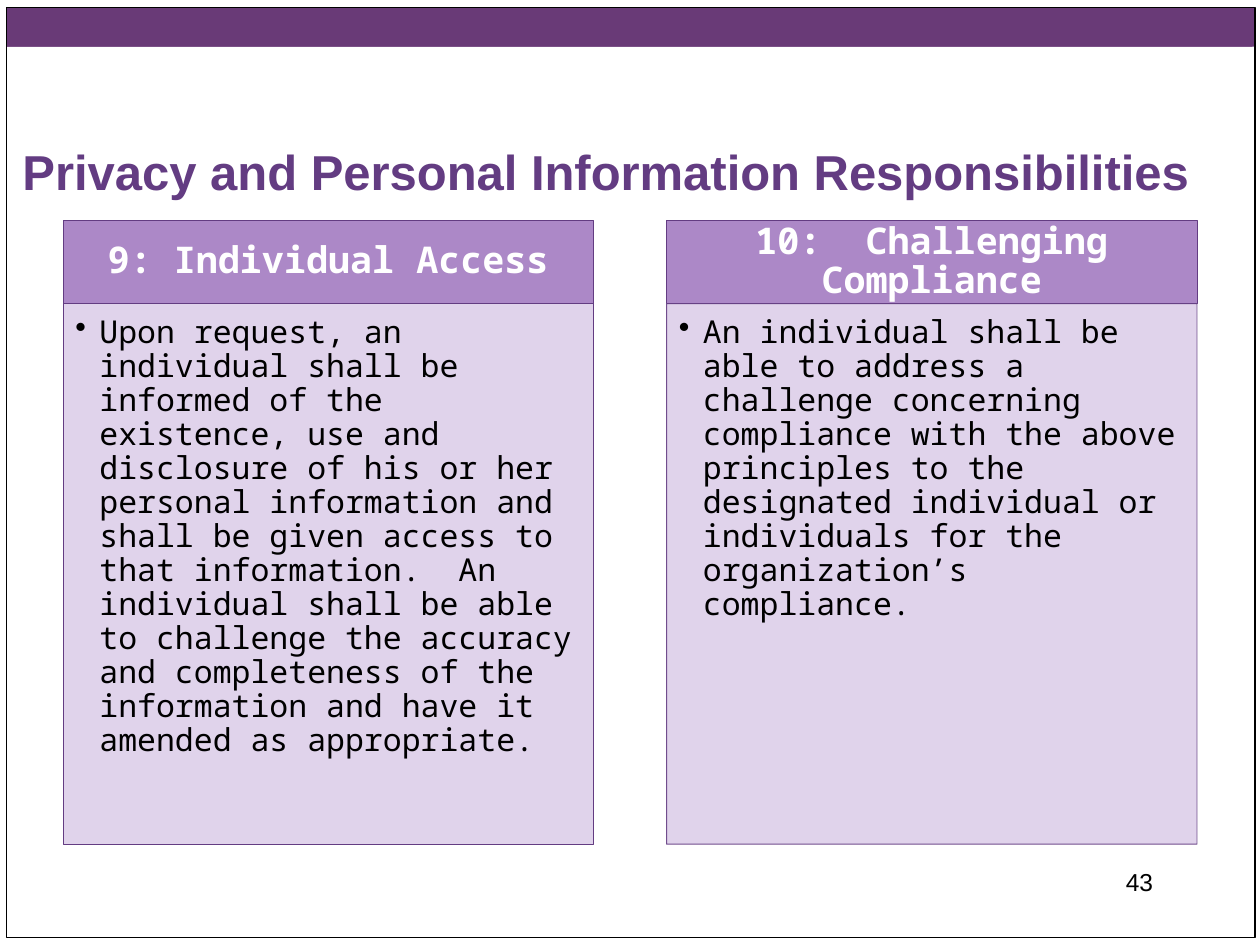
from dataclasses import dataclass
from typing import Optional

from lxml.etree import SubElement
from pptx import Presentation
from pptx.dml.color import RGBColor
from pptx.enum.shapes import MSO_SHAPE
from pptx.enum.text import MSO_ANCHOR, PP_ALIGN
from pptx.oxml.ns import qn
from pptx.util import Inches, Pt

PURPLE = "633C82"
BAND = "693A77"
BLACK = "000000"
MONO = "Noto Sans Mono"


@dataclass
class Box:
    left: float
    top: float
    width: float
    height: float

    def lengths(self) -> list:
        """Return the position and size as lengths."""
        return [Inches(v) for v in (self.left, self.top, self.width, self.height)]


@dataclass
class Style:
    size: float
    font: str
    color: str
    bold: bool = False
    align: PP_ALIGN = PP_ALIGN.LEFT
    anchor: MSO_ANCHOR = MSO_ANCHOR.TOP
    insets: tuple = (0.1, 0.05, 0.1, 0.05)
    line_spacing: float = 1.0
    space_after: float = 0


@dataclass
class Principle:
    heading: str
    body: str
    line_opacity: int = 100


HEADING = Style(21, MONO, "FFFFFF", True, PP_ALIGN.CENTER, MSO_ANCHOR.MIDDLE,
                (0.16, 0.09, 0.16, 0.09), 0.9, 7)
BODY = Style(18, MONO, BLACK, insets=(0.1, 0.1, 0.14, 0.16),
             line_spacing=0.9, space_after=3)
TITLE = Style(28, "Arial", PURPLE, True, anchor=MSO_ANCHOR.BOTTOM)
PAGE_NUMBER = Style(14, "Arial", BLACK, align=PP_ALIGN.RIGHT)

PRINCIPLES = [
    Principle(
        "9: Individual Access",
        "Upon request, an individual shall be informed of the existence, use and "
        "disclosure of his or her personal information and shall be given access to "
        "that information.  An individual shall be able to challenge the accuracy "
        "and completeness of the information and have it amended as appropriate.",
    ),
    Principle(
        "10:  Challenging Compliance",
        "An individual shall be able to address a challenge concerning compliance "
        "with the above principles to the designated individual or individuals for "
        "the organization’s compliance.",
        90,
    ),
]


def set_color(color_format, value: str, opacity: int = 100) -> None:
    """Apply a hex colour and an opacity in percent to a solid colour format."""
    color_format.rgb = RGBColor.from_string(value)
    if opacity < 100:
        element = color_format._xFill.find(qn("a:srgbClr"))
        SubElement(element, qn("a:alpha")).set("val", str(opacity * 1000))


def write(shape, text: str, style: Style):
    """Write one styled paragraph in a shape and return it."""
    frame = shape.text_frame
    frame.word_wrap = True
    frame.vertical_anchor = style.anchor
    (frame.margin_left, frame.margin_top,
     frame.margin_right, frame.margin_bottom) = map(Inches, style.insets)
    paragraph = frame.paragraphs[0]
    paragraph.text = text
    paragraph.alignment = style.align
    paragraph.line_spacing = style.line_spacing
    paragraph.space_after = Pt(style.space_after)
    paragraph.font.size = Pt(style.size)
    paragraph.font.name = style.font
    paragraph.font.bold = style.bold
    paragraph.font.fill.solid()
    set_color(paragraph.font.fill.fore_color, style.color)
    return paragraph


def add_bullet(paragraph, indent: float) -> None:
    """Give a paragraph a round bullet with a hanging indent."""
    properties = paragraph._p.get_or_add_pPr()
    properties.set("marL", str(Inches(indent)))
    properties.set("indent", str(-Inches(indent)))
    bullet = properties.makeelement(qn("a:buChar"), {"char": "•"})
    properties.insert_element_before(bullet, "a:tabLst", "a:defRPr", "a:extLst")


def add_rectangle(slide, box: Box, fill: Optional[str] = None,
                  line: Optional[str] = None, line_width: float = 0.5,
                  fill_opacity: int = 100, line_opacity: int = 100):
    """Draw a flat rectangle with an optional fill and outline."""
    shape = slide.shapes.add_shape(MSO_SHAPE.RECTANGLE, *box.lengths())
    shape.shadow.inherit = False
    if fill:
        shape.fill.solid()
        set_color(shape.fill.fore_color, fill, fill_opacity)
    else:
        shape.fill.background()
    if line:
        shape.line.width = Pt(line_width)
        shape.line.fill.solid()
        set_color(shape.line.fill.fore_color, line, line_opacity)
    else:
        shape.line.fill.background()
    return shape


def add_text(slide, box: Box, text: str, style: Style) -> None:
    """Add a text box with one paragraph."""
    write(slide.shapes.add_textbox(*box.lengths()), text, style)


def add_principle(slide, principle: Principle, left: float) -> None:
    """Draw one column: a heading above a bulleted body."""
    top, width, heading_height, body_height = 1.75, 4.21, 0.66, 4.29
    heading = add_rectangle(slide, Box(left, top, width, heading_height),
                            "A37CC2", PURPLE, fill_opacity=90)
    write(heading, principle.heading, HEADING)
    body = add_rectangle(slide, Box(left, top + heading_height, width, body_height),
                         "E0D3EB", PURPLE, line_opacity=principle.line_opacity)
    add_bullet(write(body, principle.body, BODY), 0.19)


def main() -> None:
    """Build the slide and save it."""
    presentation = Presentation()
    presentation.slide_width, presentation.slide_height = Inches(10), Inches(7.5)
    slide = presentation.slides.add_slide(presentation.slide_layouts[6])
    for width in (9.91, 9.89):
        add_rectangle(slide, Box(0.05, 0.06, width, 0.31), BAND)
    add_rectangle(slide, Box(0.05, 0.06, 9.91, 7.38), line=BLACK, line_width=0.75)
    add_text(slide, Box(0.08, 0.64, 9.92, 1),
             "Privacy and Personal Information Responsibilities", TITLE)
    for index, principle in enumerate(PRINCIPLES):
        add_principle(slide, principle, 0.5 + index * 4.79)
    add_text(slide, Box(7.17, 6.83, 2.08, 0.5), "43", PAGE_NUMBER)
    presentation.save("out.pptx")


if __name__ == "__main__":
    main()
